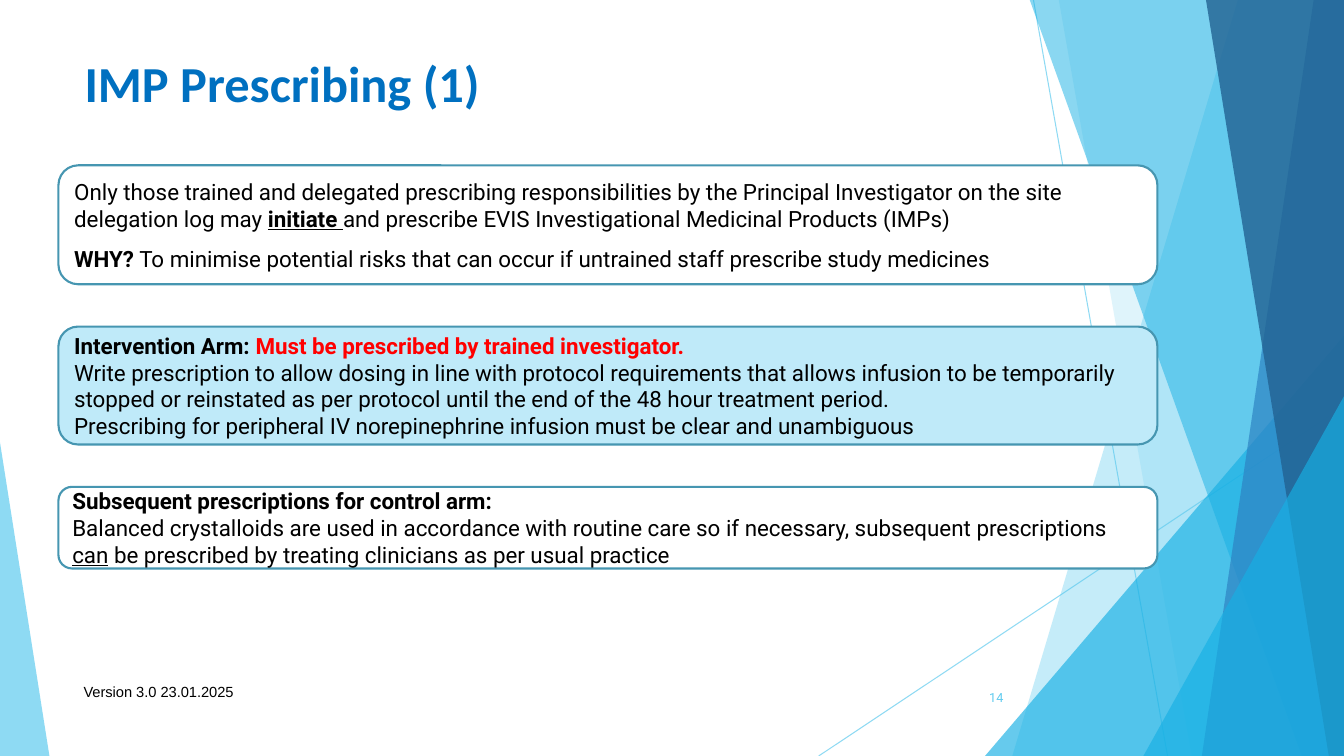
from dataclasses import dataclass

from lxml import etree
from pptx import Presentation
from pptx.dml import color as dml
from pptx.enum import shapes, text
from pptx.oxml import ns
from pptx.util import Inches, Pt


@dataclass(frozen=True)
class Theme:
    sky: str = "5FCBEF"
    azure: str = "17B0E4"
    blue: str = "2E83C3"
    navy: str = "226292"
    heading: str = "0070C0"
    border: str = "4696B1"
    tint: str = "BFEAF9"
    white: str = "FFFFFF"
    black: str = "000000"
    alert: str = "FF0000"
    title_size: float = 36
    body_size: float = 16
    footer_size: float = 10.5
    number_size: float = 9
    body_font: str = "Roboto"


THEME = Theme()
WIDTH, HEIGHT = 13.33, 7.5
PANEL_LEFT, PANEL_WIDTH = 0.58, 10.9
BODY = {"name": THEME.body_font, "size": Pt(THEME.body_size), "color": THEME.black}
BOLD = {"bold": True}
UNDERLINE = {"underline": True}


def rgb(value):
    return dml.RGBColor.from_string(value)


def set_opacity(shape, percent):
    for color in shape._element.spPr.iter(ns.qn("a:srgbClr")):
        etree.SubElement(color, ns.qn("a:alpha")).set("val", str(percent * 1000))


def paint(shape, color, opacity):
    shape.shadow.inherit = False
    shape.fill.solid()
    shape.fill.fore_color.rgb = rgb(color)
    shape.line.fill.background()
    set_opacity(shape, opacity)


def add_ray(slide, start, end):
    points = [Inches(value) for value in (*start, *end)]
    connector = slide.shapes.add_connector(shapes.MSO_CONNECTOR.STRAIGHT, *points)
    connector.line.color.rgb = rgb(THEME.sky)
    connector.line.width = Pt(0.75)
    set_opacity(connector, 70)
    etree.SubElement(connector._element.spPr, ns.qn("a:effectLst"))


def add_band(slide, top_x, bottom_x, color, opacity):
    corners = [(top_x, -0.01), (WIDTH, -0.01), (WIDTH, HEIGHT), (bottom_x, HEIGHT)]
    points = [(Inches(x), Inches(y)) for x, y in corners]
    builder = slide.shapes.build_freeform(*points[0])
    builder.add_line_segments(points[1:], close=True)
    paint(builder.convert_to_shape(), color, opacity)


def add_triangle(slide, left, top, width, apex, color, opacity):
    shape = slide.shapes.add_shape(
        shapes.MSO_SHAPE.ISOSCELES_TRIANGLE,
        Inches(left), Inches(top), Inches(width), Inches(HEIGHT - top))
    shape.adjustments[0] = apex
    paint(shape, color, opacity)


def add_run(paragraph, words, formats):
    run = paragraph.add_run()
    run.text = words
    for name, value in formats.items():
        if name == "color":
            run.font.color.rgb = rgb(value)
        else:
            setattr(run.font, name, value)


def write(shape, paragraphs, base, anchor=text.MSO_ANCHOR.TOP,
          align=text.PP_ALIGN.LEFT, gap=0):
    frame = shape.text_frame
    frame.word_wrap = True
    frame.vertical_anchor = anchor
    for index, runs in enumerate(paragraphs):
        paragraph = frame.add_paragraph() if index else frame.paragraphs[0]
        paragraph.alignment = align
        if index and gap:
            paragraph.space_before = Pt(gap)
        for words, formats in runs:
            add_run(paragraph, words, {**base, **formats})


def add_label(slide, box, words, base, **layout):
    shape = slide.shapes.add_textbox(*[Inches(value) for value in box])
    write(shape, [[(words, {})]], base, **layout)


def add_panel(slide, top, height, fill, paragraphs, gap=0):
    shape = slide.shapes.add_shape(
        shapes.MSO_SHAPE.ROUNDED_RECTANGLE,
        Inches(PANEL_LEFT), Inches(top), Inches(PANEL_WIDTH), Inches(height))
    shape.shadow.inherit = False
    shape.fill.solid()
    shape.fill.fore_color.rgb = rgb(fill)
    shape.line.color.rgb = rgb(THEME.border)
    shape.line.width = Pt(1.5)
    write(shape, paragraphs, BODY, anchor=text.MSO_ANCHOR.MIDDLE, gap=gap)


def add_backdrop(slide):
    add_ray(slide, (10.25, 0), (11.58, HEIGHT))
    add_ray(slide, (WIDTH, 4.03), (8.12, HEIGHT))
    add_band(slide, 12.28, 10.04, THEME.sky, 36)
    add_band(slide, 10.5, 11.82, THEME.sky, 20)
    add_triangle(slide, 9.77, 3.33, 3.56, 1, THEME.azure, 66)
    add_band(slide, 10.21, 12.91, THEME.azure, 50)
    add_band(slide, 13.03, 11.92, THEME.blue, 70)
    add_band(slide, 11.96, 13.18, THEME.navy, 80)
    add_triangle(slide, 11.34, 3.93, 1.99, 1, THEME.azure, 66)
    add_triangle(slide, 0, 4.39, 0.49, 0, THEME.sky, 70)


def main():
    presentation = Presentation()
    presentation.slide_width = Inches(WIDTH)
    presentation.slide_height = Inches(HEIGHT)
    slide = presentation.slides.add_slide(presentation.slide_layouts[6])
    add_backdrop(slide)
    add_label(slide, (0.73, 6.73, 6.89, 0.4), "Version 3.0 23.01.2025",
              {"name": "Arial", "size": Pt(THEME.footer_size), "color": THEME.black})
    add_label(slide, (0.74, 0.47, 10, 1.44), "IMP Prescribing (1)",
              {"name": "Calibri", "size": Pt(THEME.title_size),
               "color": THEME.heading, "bold": True})
    add_panel(slide, 1.64, 1.18, THEME.white, [
        [("Only those trained and delegated prescribing responsibilities by the "
          "Principal Investigator on the site delegation log may ", {}),
         ("initiate ", {**BOLD, **UNDERLINE}),
         ("and prescribe EVIS Investigational Medicinal Products (IMPs)", {})],
        [("WHY?", BOLD),
         (" To minimise potential risks that can occur if untrained staff "
          "prescribe study medicines", {})],
    ], gap=9.4)
    add_label(slide, (9.3, 6.72, 0.75, 0.4), "14",
              {"name": THEME.body_font, "size": Pt(THEME.number_size), "color": THEME.sky},
              anchor=text.MSO_ANCHOR.MIDDLE, align=text.PP_ALIGN.RIGHT)
    add_panel(slide, 3.24, 1.17, THEME.tint, [
        [("Intervention Arm:", BOLD),
         (" Must be prescribed by trained investigator.", {**BOLD, "color": THEME.alert})],
        [("Write prescription to allow dosing in line with protocol requirements that "
          "allows infusion to be temporarily stopped or reinstated as per protocol "
          "until the end of the 48 hour treatment period.", {})],
        [("Prescribing for peripheral IV norepinephrine infusion must be clear "
          "and unambiguous", {})],
    ])
    add_panel(slide, 4.83, 0.81, THEME.white, [
        [("Subsequent prescriptions for control arm:", BOLD)],
        [("Balanced crystalloids are used in accordance with routine care so if "
          "necessary, subsequent prescriptions ", {}),
         ("can", UNDERLINE),
         (" be prescribed by treating clinicians as per usual practice", {})],
    ])
    presentation.save("out.pptx")


if __name__ == "__main__":
    main()
